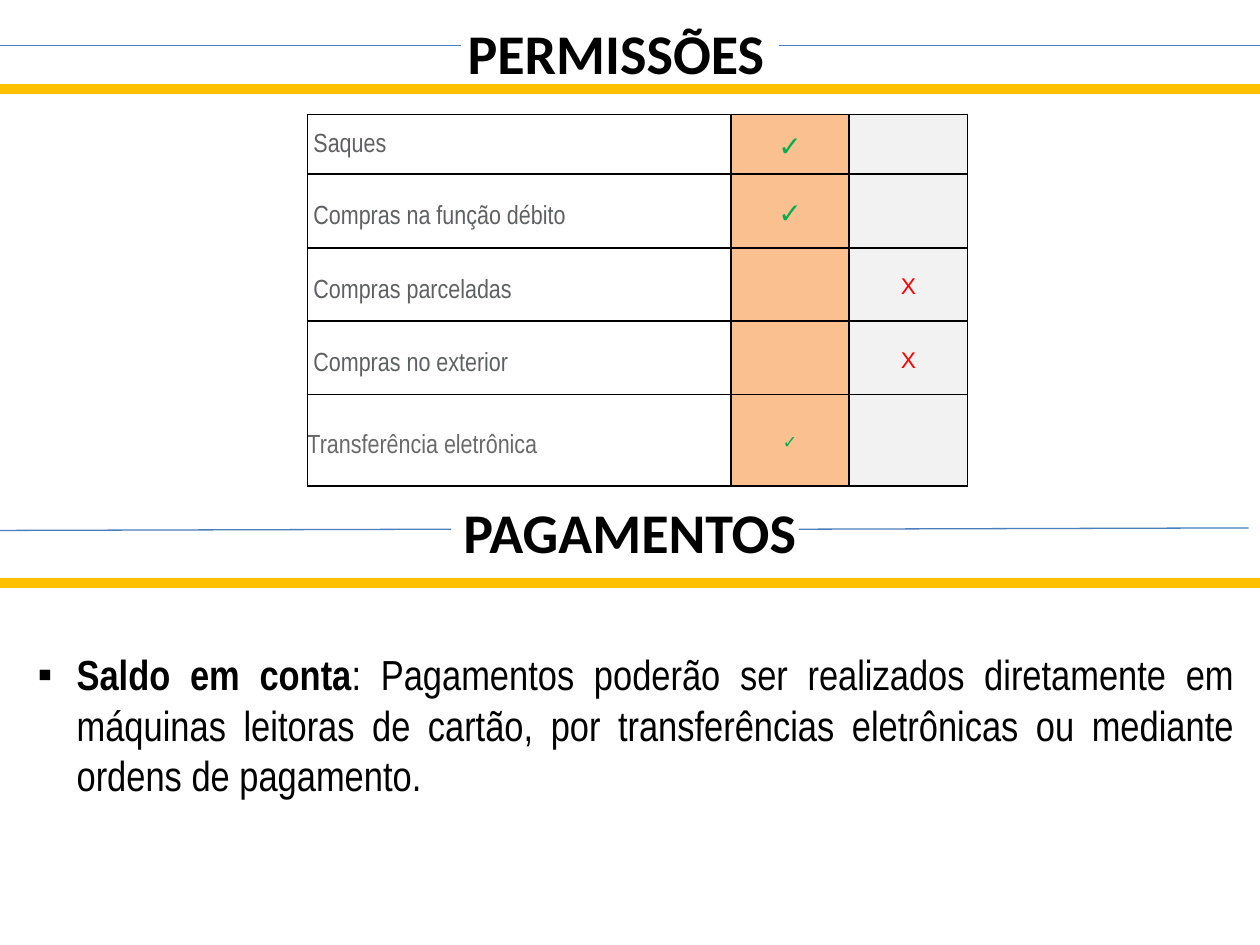
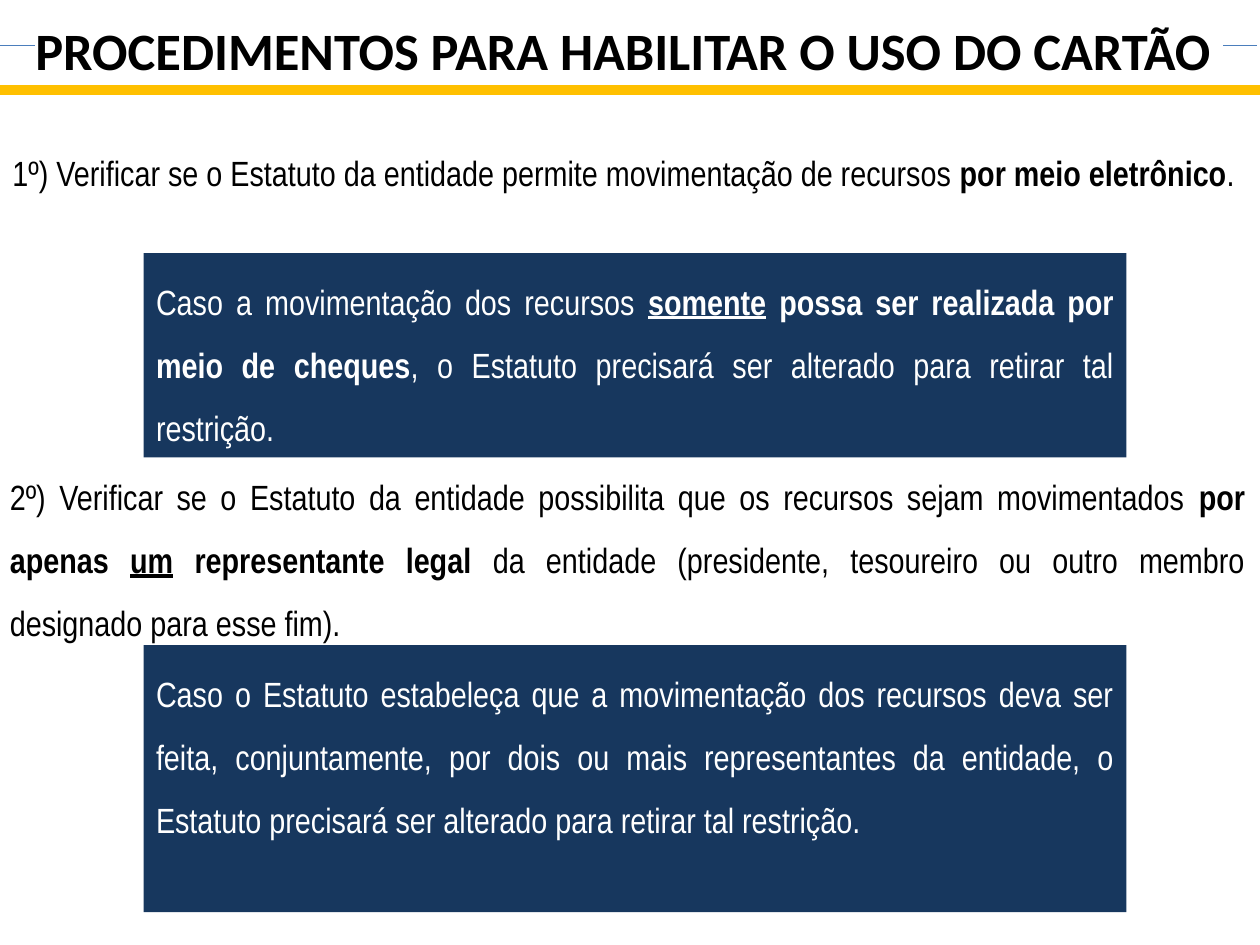
from dataclasses import dataclass

from lxml import etree
from pptx import Presentation
from pptx import util as u
from pptx.dml.color import RGBColor
from pptx.enum import shapes, text
from pptx.oxml import ns

Inches, Pt = u.Inches, u.Pt
ALIGN, ANCHOR = text.PP_ALIGN, text.MSO_ANCHOR


@dataclass(frozen=True)
class Theme:
    ink: str = "000000"
    white: str = "FFFFFF"
    gold: str = "FFC000"
    rule: str = "4B7EBC"
    navy: str = "17375E"
    label: str = "5F6062"
    label_soft: str = "696969"
    allowed: str = "00B050"
    denied: str = "FF0000"
    peach: str = "FAC090"
    pale: str = "F2F2F2"
    title_font: str = "Calibri"
    body_font: str = "Arial Narrow"
    mark_font: str = "Arial"
    title: int = 32
    long_title: int = 30
    lead: int = 24
    body: int = 20
    row_label: int = 15
    check: int = 16
    small_check: int = 10
    cross: int = 13


THEME = Theme()


def rgb(code):
    return RGBColor.from_string(code)


def add_child(parent, tag, **attributes):
    return etree.SubElement(parent, ns.qn(tag), **attributes)


class SlideMaker:
    """Holds the theme and the slide being built."""

    def __init__(self, deck, theme):
        self.deck, self.theme, self.page = deck, theme, None

    def new_page(self):
        self.page = self.deck.slides.add_slide(self.deck.slide_layouts[6])

    def add_spans(self, para, spans, size, font=None, color=None, align=ALIGN.JUSTIFY,
                  spacing=1.0, before=0, after=0):
        """Each span is (words, style), where style may hold b, i and u."""
        para.alignment, para.line_spacing = align, spacing
        para.space_before, para.space_after = Pt(before), Pt(after)
        for words, style in spans:
            span = para.add_run()
            span.text = words
            span.font.name = font or self.theme.body_font
            span.font.size = Pt(size)
            span.font.color.rgb = rgb(color or self.theme.ink)
            span.font.bold = "b" in style
            span.font.italic = "i" in style
            span.font.underline = "u" in style

    def text_box(self, left, top, width, height, spans, size, **look):
        box = self.page.shapes.add_textbox(
            Inches(left), Inches(top), Inches(width), Inches(height))
        box.text_frame.word_wrap = True
        para = box.text_frame.paragraphs[0]
        self.add_spans(para, spans, size, **look)
        return para

    def bullet(self, para, mark, indent):
        props = para._p.get_or_add_pPr()
        props.set("marL", str(Inches(indent)))
        props.set("indent", str(-Inches(indent)))
        add_child(props, "a:buFont", typeface="Arial")
        add_child(props, "a:buChar", char=mark)

    def rectangle(self, left, top, width, height, color, line_width=0):
        box = self.page.shapes.add_shape(
            shapes.MSO_SHAPE.RECTANGLE,
            Inches(left), Inches(top), Inches(width), Inches(height))
        box.shadow.inherit = False
        box.fill.solid()
        box.fill.fore_color.rgb = rgb(color)
        if line_width:
            box.line.color.rgb = rgb(color)
            box.line.width = Pt(line_width)
        else:
            box.line.fill.background()
        return box

    def rule(self, start, end):
        line = self.page.shapes.add_connector(
            shapes.MSO_CONNECTOR.STRAIGHT, *(Inches(n) for n in start + end))
        line.line.color.rgb = rgb(self.theme.rule)
        line.line.width = Pt(0.75)
        add_child(line._element.spPr, "a:effectLst")

    def heading(self, words, size, left, top, width, rules, band_top):
        """Title with a thin rule on each side and a gold band below."""
        self.rectangle(0, band_top, 10, 0.05, self.theme.gold, line_width=2)
        for start, end in rules:
            self.rule(start, end)
        self.text_box(left, top, width, 0.94, [(words, "b")], size,
                      font=self.theme.title_font, align=ALIGN.CENTER, spacing=1.19)

    def step(self, left, top, height, spans):
        self.text_box(left, top, 10, height, spans, self.theme.body,
                      spacing=1.5, before=4.8)

    def callout(self, top, height, spans):
        box = self.rectangle(1.14, top, 7.8, height, self.theme.navy)
        frame = box.text_frame
        frame.word_wrap, frame.vertical_anchor = True, ANCHOR.TOP
        self.add_spans(frame.paragraphs[0], spans, self.theme.body,
                       color=self.theme.white, spacing=1.5, before=4.8)

    def table(self, left, top, widths, heights):
        grid = self.page.shapes.add_table(
            len(heights), len(widths), Inches(left), Inches(top),
            Inches(sum(widths)), Inches(sum(heights))).table
        grid.first_row = grid.horz_banding = False
        for column, width in zip(grid.columns, widths):
            column.width = Inches(width)
        for row, height in zip(grid.rows, heights):
            row.height = Inches(height)
        return grid

    def cell(self, cell, fill, spans=(), **look):
        cell.vertical_anchor = ANCHOR.MIDDLE
        cell.margin_left = cell.margin_right = 0
        cell.margin_top = cell.margin_bottom = 0
        props = cell._tc.get_or_add_tcPr()
        for side in ("a:lnL", "a:lnR", "a:lnT", "a:lnB"):
            edge = add_child(props, side, w=str(Pt(1)))
            add_child(add_child(edge, "a:solidFill"), "a:srgbClr", val=self.theme.ink)
        if fill:
            cell.fill.solid()
            cell.fill.fore_color.rgb = rgb(fill)
        else:
            cell.fill.background()
        if spans:
            self.add_spans(cell.text_frame.paragraphs[0], spans, **look)


def permissions_table(maker):
    t = maker.theme
    marks = {
        "check": ("✓", "bi", t.check, t.allowed),
        "small check": ("✓", "bi", t.small_check, t.allowed),
        "cross": ("X", "", t.cross, t.denied),
    }
    permissions = [
        (" Saques", "check", None),
        (" Compras na função débito", "check", None),
        (" Compras parceladas", None, "cross"),
        (" Compras no exterior", None, "cross"),
        ("Transferência eletrônica", "small check", None),
    ]
    grid = maker.table(2.44, 0.91, [3.36, 0.94, 0.94], [0.47, 0.59, 0.58, 0.58, 0.73])
    for row, (label, *row_marks) in enumerate(permissions):
        last = row == len(permissions) - 1
        maker.cell(grid.cell(row, 0), None, [(label, "")],
                   size=t.row_label, color=t.label_soft if last else t.label,
                   align=ALIGN.LEFT, spacing=1.55 if row else 1.15,
                   before=4.8 if row else 1.9)
        for column, (mark, fill) in enumerate(zip(row_marks, (t.peach, t.pale)), 1):
            target = grid.cell(row, column)
            if mark is None:
                maker.cell(target, fill)
                continue
            words, style, size, color = marks[mark]
            maker.cell(target, fill, [(words, style)], size=size, font=t.mark_font,
                       color=color, align=ALIGN.CENTER, spacing=1.19, after=6)


def permissions_page(maker):
    t = maker.theme
    maker.new_page()
    maker.heading("PERMISSÕES ", t.title, 2.44, 0, 5,
                  [((0, 0.36), (3.66, 0.36)), ((6.18, 0.36), (10, 0.36))], 0.68)
    permissions_table(maker)
    maker.heading("PAGAMENTOS", t.title, 3.23, 3.8, 3.54,
                  [((0, 4.21), (3.58, 4.2)), ((6.34, 4.2), (9.91, 4.19))], 4.6)
    balance = maker.text_box(0.2, 5.1, 9.69, 1.32, [
        ("Saldo em conta", "b"),
        (": Pagamentos poderão ser realizados diretamente em máquinas leitoras de "
         "cartão, por transferências eletrônicas ou mediante ordens de pagamento.", ""),
    ], t.lead)
    maker.bullet(balance, "▪", 0.31)


def procedures_page(maker):
    maker.new_page()
    maker.heading("PROCEDIMENTOS PARA HABILITAR O USO DO CARTÃO ",
                  maker.theme.long_title, -2.23, 0, 14.45,
                  [((0, 0.36), (0.28, 0.36)), ((9.71, 0.36), (9.98, 0.36))], 0.69)
    maker.step(0, 0.99, 1.05, [
        ("1º) Verificar se o Estatuto da entidade permite movimentação de recursos ", ""),
        ("por meio eletrônico", "b"),
        (". ", ""),
    ])
    maker.callout(2.01, 1.62, [
        ("Caso a movimentação dos recursos ", ""),
        ("somente", "bu"),
        (" possa ser realizada por meio de cheques", "b"),
        (", o Estatuto precisará ser alterado para retirar tal restrição.", ""),
    ])
    maker.step(-0.02, 3.56, 1.55, [
        ("2º) Verificar se o Estatuto da entidade possibilita que os recursos sejam "
         "movimentados ", ""),
        ("por apenas ", "b"),
        ("um", "bu"),
        (" representante legal ", "b"),
        ("da entidade (presidente, tesoureiro ou outro membro designado para esse "
         "fim).", ""),
    ])
    maker.callout(5.12, 2.12, [
        ("Caso o Estatuto estabeleça que a movimentação dos recursos deva ser feita, "
         "conjuntamente, por dois ou mais representantes da entidade, o Estatuto "
         "precisará ser alterado para retirar tal restrição.", ""),
    ])


def main():
    deck = Presentation()
    deck.slide_width, deck.slide_height = Inches(10), Inches(7.5)
    maker = SlideMaker(deck, THEME)
    permissions_page(maker)
    procedures_page(maker)
    deck.save("out.pptx")


if __name__ == "__main__":
    main()
